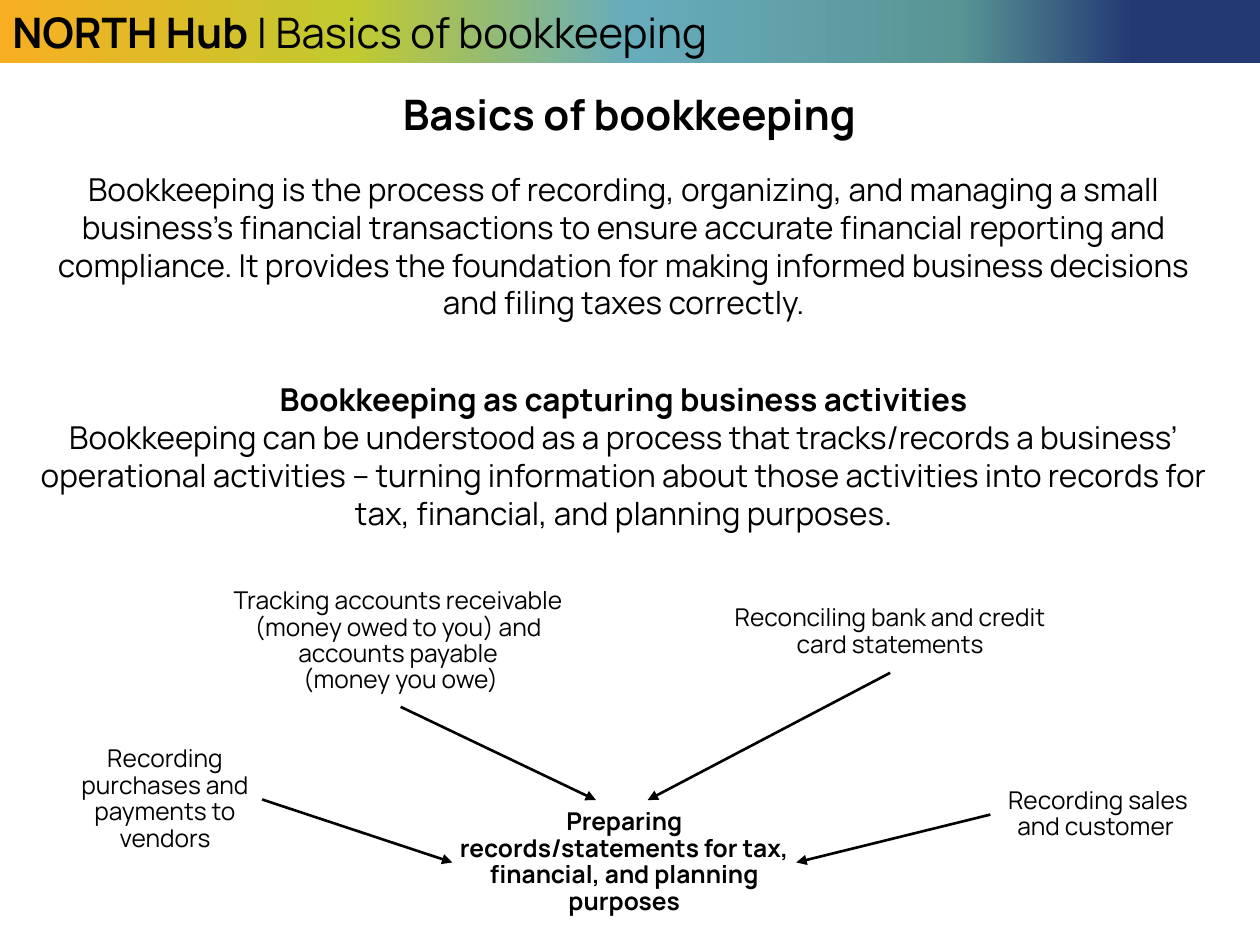
import lxml.etree
import pptx
import pptx.dml.color
import pptx.enum.shapes
import pptx.enum.text
import pptx.oxml.ns
import pptx.util
from dataclasses import dataclass

PX = 9144  # EMU per px, 100 px to the inch
TOP, LEFT, BOTTOM, RIGHT = range(4)  # connection sites


@dataclass(frozen=True)
class Theme:
    font: str = "Manrope"
    ink: str = "000000"
    title_size: int = 24
    body_size: int = 18
    node_size: int = 14
    line_width: float = 1.5
    bar_stops: tuple = ((0, "F7AF21"), (28, "C1CA2F"), (50, "67ACBC"),
                        (76, "599595"), (90, "233973"))


THEME = Theme()
INK = pptx.dml.color.RGBColor.from_string(THEME.ink)
CENTER = pptx.enum.text.PP_ALIGN.CENTER
qn = pptx.oxml.ns.qn


def px(*lengths):
    return [pptx.util.Emu(length * PX) for length in lengths]


def style(paragraph, size, bold=False, alignment=CENTER):
    paragraph.alignment = alignment
    font = paragraph.font
    font.name, font.size, font.bold = THEME.font, pptx.util.Pt(size), bold
    font.color.rgb = INK


def add_text(slide, box, lines, size):
    """Add a centred text box; lines holds (text, bold) pairs."""
    shape = slide.shapes.add_textbox(*px(*box))
    frame = shape.text_frame
    frame.word_wrap = True
    for index, (text, bold) in enumerate(lines):
        paragraph = frame.add_paragraph() if index else frame.paragraphs[0]
        paragraph.text = text
        style(paragraph, size, bold)
    return shape


def add_header_bar(slide, box, name, topic):
    bar = slide.shapes.add_shape(pptx.enum.shapes.MSO_SHAPE.RECTANGLE, *px(*box))
    bar.shadow.inherit = False
    bar.line.fill.background()
    bar.fill.gradient()
    bar.fill.gradient_angle = 0
    stops = next(bar._element.spPr.iter(qn("a:gsLst")))
    for stop in list(stops):
        stops.remove(stop)
    for position, color in THEME.bar_stops:
        stop = lxml.etree.SubElement(stops, qn("a:gs"), pos=str(position * 1000))
        lxml.etree.SubElement(stop, qn("a:srgbClr"), val=color)

    frame = bar.text_frame
    frame.vertical_anchor = pptx.enum.text.MSO_ANCHOR.TOP
    paragraph = frame.paragraphs[0]
    style(paragraph, THEME.title_size, alignment=pptx.enum.text.PP_ALIGN.LEFT)
    for text, bold in ((name + " ", True), ("| " + topic, False)):
        run = paragraph.add_run()
        run.text = text
        run.font.bold = bold


def add_node(slide, box, lines, bold=False):
    node = add_text(slide, box, [(line, bold) for line in lines], THEME.node_size)
    frame = node.text_frame
    frame.vertical_anchor = pptx.enum.text.MSO_ANCHOR.MIDDLE
    frame.margin_left, frame.margin_top, frame.margin_right, frame.margin_bottom = px(2, 2, 2, 2)
    for paragraph in frame.paragraphs:
        paragraph.line_spacing = 0.9
    return node


def add_arrow(slide, source, source_site, end, target=None, target_site=None):
    """Run an arrow from a node's side to a point, joined to the target if given."""
    arrow = slide.shapes.add_connector(
        pptx.enum.shapes.MSO_CONNECTOR.STRAIGHT, *px(0, 0), *px(*end))
    arrow.begin_connect(source, source_site)
    if target is not None:
        arrow.end_connect(target, target_site)
    arrow.line.color.rgb = INK
    arrow.line.width = pptx.util.Pt(THEME.line_width)
    lxml.etree.SubElement(arrow.line._get_or_add_ln(), qn("a:tailEnd"), type="triangle")
    lxml.etree.SubElement(arrow._element.spPr, qn("a:effectLst"))


def add_activity_diagram(slide, box):
    """Draw four activities pointing at the records they lead to."""
    left, top, width, height = box

    def place(x, y, w, h):
        return left + x, top + y, w, h

    sales = add_node(slide, place(732, 157, 171, 65), ["Recording sales and customer "])
    purchases = add_node(slide, place(0, 127, 154, 101),
                         ["Recording purchases and payments to vendors"])
    accounts = add_node(slide, place(77, 0, 374, 104), [
        "Tracking accounts receivable ", "(money owed to you) and ",
        "accounts payable ", "(money you owe)"])
    records = add_node(slide, place(305, 195, 273, 65), [
        "Preparing records/statements for tax, financial, and planning purposes"], bold=True)
    statements = add_node(slide, place(516, 12, 273, 65),
                          ["Reconciling bank and credit card statements"])

    above_records = top + 178
    add_arrow(slide, statements, BOTTOM, (left + 460, above_records))
    add_arrow(slide, sales, LEFT, (left + 578, top + 228), records, RIGHT)
    add_arrow(slide, accounts, BOTTOM, (left + 419, above_records))
    add_arrow(slide, purchases, RIGHT, (left + 305, top + 228), records, LEFT)


def main():
    presentation = pptx.Presentation()
    presentation.slide_width, presentation.slide_height = px(1000, 750)
    slide = presentation.slides.add_slide(presentation.slide_layouts[6])
    topic = "Basics of bookkeeping"

    add_text(slide, (20, 65, 959, 50), [(topic, True)], THEME.title_size)
    add_header_bar(slide, (0, 0, 1000, 50), "NORTH Hub", topic)
    add_text(slide, (20, 130, 950, 131), [(
        "Bookkeeping is the process of recording, organizing, and managing a small "
        "business’s financial transactions to ensure accurate financial reporting and "
        "compliance. It provides the foundation for making informed business decisions "
        "and filing taxes correctly.", False)], THEME.body_size)
    add_text(slide, (20, 297, 950, 131), [
        ("Bookkeeping as capturing business activities", True),
        ("Bookkeeping can be understood as a process that tracks/records a business’ "
         "operational activities – turning information about those activities into "
         "records for tax, financial, and planning purposes.", False)], THEME.body_size)
    add_activity_diagram(slide, (54, 457, 903, 260))
    presentation.save("out.pptx")


if __name__ == "__main__":
    main()
